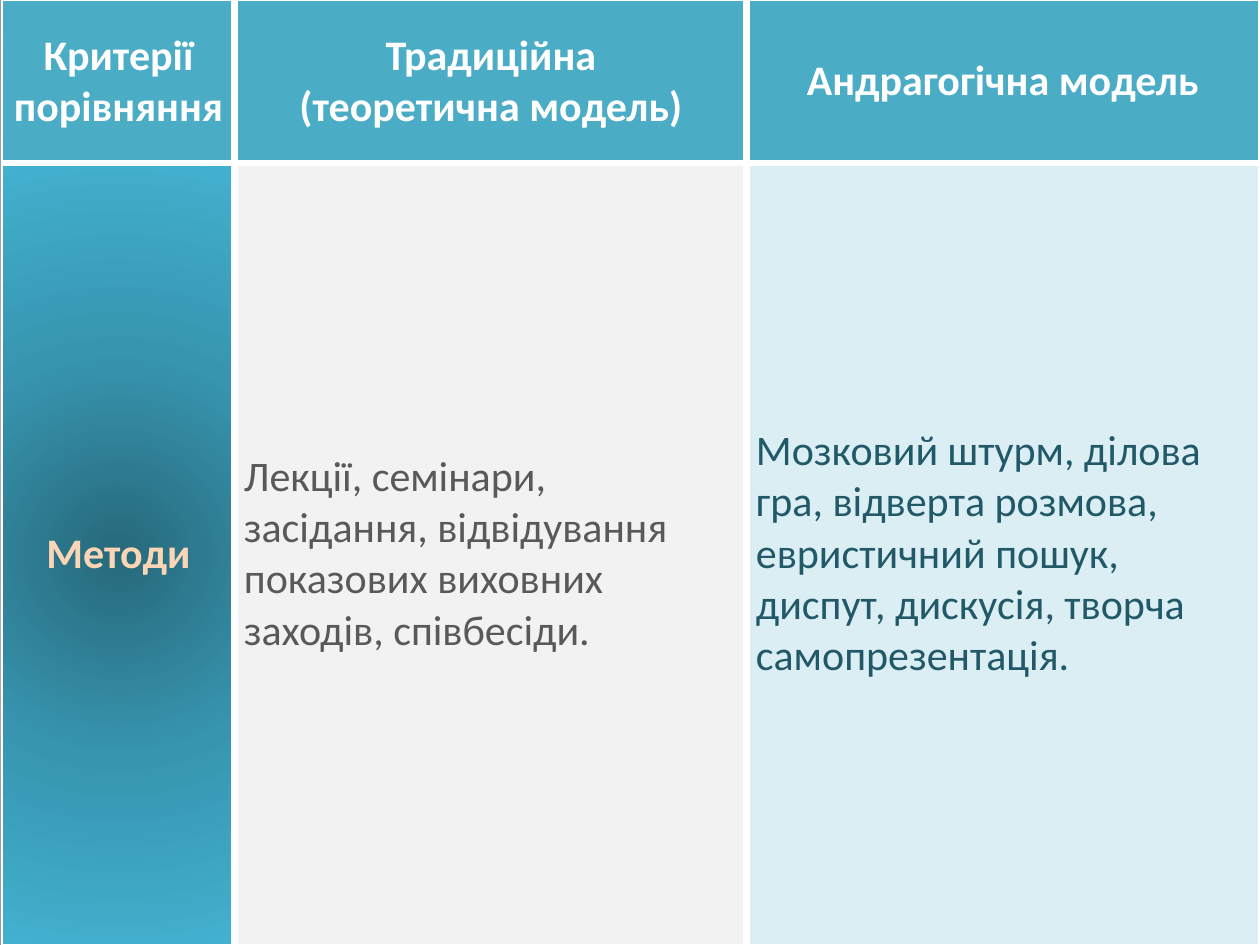
from dataclasses import dataclass

from lxml import etree
from pptx import Presentation
from pptx.dml.color import RGBColor
from pptx.enum.text import MSO_ANCHOR, PP_ALIGN
from pptx.oxml import parse_xml
from pptx.oxml.ns import nsdecls, qn
from pptx.util import Emu, Pt

CENTER, LEFT = PP_ALIGN.CENTER, PP_ALIGN.LEFT
MIDDLE = MSO_ANCHOR.MIDDLE

PX = 914400 // 126  # EMU in one px
PAGE_WIDTH, PAGE_HEIGHT = 1260, 945
TABLE_LEFT = 2
COLUMN_WIDTHS = (233, 512, 512)
ROW_HEIGHTS = (163, 782)
SIDE_MARGIN = 9
OUTER_BORDER, INNER_BORDER = Pt(1), Pt(4.5)

WHITE = RGBColor(0xFF, 0xFF, 0xFF)
GRAY = RGBColor(0x97, 0x97, 0x97)
TEAL = RGBColor(0x4B, 0xAC, 0xC6)
PEACH = RGBColor(0xFC, 0xD5, 0xB5)
DARK_GRAY = RGBColor(0x59, 0x59, 0x59)
LIGHT_GRAY = RGBColor(0xF2, 0xF2, 0xF2)
DEEP_TEAL = RGBColor(0x21, 0x59, 0x68)
PALE_TEAL = RGBColor(0xDB, 0xEE, 0xF4)

# Gradient stops run from the centre outwards: (percent, colour)
Stops = tuple[tuple[int, RGBColor], ...]
PAGE_GLOW: Stops = ((0, WHITE), (100, GRAY))
METHODS_GLOW: Stops = (
    (0, RGBColor(0x27, 0x69, 0x7B)),
    (50, RGBColor(0x37, 0x95, 0xAF)),
    (100, RGBColor(0x42, 0xB1, 0xCF)),
)


@dataclass(frozen=True)
class CellContent:
    lines: tuple[str, ...]
    fill: RGBColor | Stops = TEAL
    color: RGBColor = WHITE
    bold: bool = True
    align: PP_ALIGN = CENTER


ROWS = (
    (
        CellContent(("Критерії порівняння",)),
        CellContent(("Традиційна", "(теоретична модель)")),
        CellContent(("Андрагогічна модель",)),
    ),
    (
        CellContent(("Методи",), METHODS_GLOW, PEACH),
        CellContent(
            ("Лекції, семінари, засідання, відвідування показових виховних "
             "заходів, співбесіди.",),
            LIGHT_GRAY, DARK_GRAY, False, LEFT),
        CellContent(
            ("Мозковий штурм, ділова гра, відверта розмова, евристичний пошук, "
             "диспут, дискусія, творча самопрезентація.",),
            PALE_TEAL, DEEP_TEAL, False, LEFT),
    ),
)


def px(length: int) -> Emu:
    return Emu(length * PX)


def set_format(target: object, values: dict) -> None:
    for name, value in values.items():
        setattr(target, name, value)


def set_radial_fill(properties: etree.ElementBase, stops: Stops) -> None:
    """Swap the solid fill of a properties element for a circular gradient."""
    stop_xml = "".join(
        f'<a:gs pos="{percent * 1000}"><a:srgbClr val="{color}"/></a:gs>'
        for percent, color in stops)
    gradient = parse_xml(
        f'<a:gradFill {nsdecls("a")} rotWithShape="1"><a:gsLst>{stop_xml}</a:gsLst>'
        '<a:path path="circle"><a:fillToRect l="50000" t="50000" r="50000" '
        'b="50000"/></a:path></a:gradFill>')
    properties.replace(properties.find(qn("a:solidFill")), gradient)


def set_borders(properties: etree.ElementBase, row: int, column: int) -> None:
    """Thin lines on the table's edge, thick ones between cells."""
    on_edge = {
        "lnL": column == 0,
        "lnR": column == len(COLUMN_WIDTHS) - 1,
        "lnT": row == 0,
        "lnB": row == len(ROW_HEIGHTS) - 1,
    }
    for index, (side, outer) in enumerate(on_edge.items()):
        width = OUTER_BORDER if outer else INNER_BORDER
        properties.insert(index, parse_xml(
            f'<a:{side} {nsdecls("a")} w="{width}"><a:solidFill>'
            f'<a:srgbClr val="{WHITE}"/></a:solidFill></a:{side}>'))


def fill_cell(table, row: int, column: int, content: CellContent) -> None:
    cell = table.cell(row, column)
    set_format(cell, {
        "vertical_anchor": MIDDLE,
        "margin_left": px(SIDE_MARGIN), "margin_right": px(SIDE_MARGIN),
        "margin_top": 0, "margin_bottom": 0,
        "text": "\n".join(content.lines),
    })
    for para in cell.text_frame.paragraphs:
        para.alignment = content.align
        for span in para.runs:
            set_format(span.font, {
                "name": "Calibri", "size": Pt(24), "bold": content.bold})
            span.font.color.rgb = content.color

    cell.fill.solid()
    properties = cell._tc.tcPr
    if isinstance(content.fill, RGBColor):
        cell.fill.fore_color.rgb = content.fill
    else:
        set_radial_fill(properties, content.fill)
    set_borders(properties, row, column)


def main() -> None:
    deck = Presentation()
    set_format(deck, {"slide_width": px(PAGE_WIDTH),
                      "slide_height": px(PAGE_HEIGHT)})
    page = deck.slides.add_slide(deck.slide_layouts.get_by_name("Blank"))

    # Background
    page.background.fill.solid()
    set_radial_fill(page.element.xpath("p:cSld/p:bg/p:bgPr")[0], PAGE_GLOW)

    # Comparison table
    table = page.shapes.add_table(
        len(ROW_HEIGHTS), len(COLUMN_WIDTHS), px(TABLE_LEFT), 0,
        px(sum(COLUMN_WIDTHS)), px(sum(ROW_HEIGHTS))).table
    table.horz_banding = False
    for column, width in zip(table.columns, COLUMN_WIDTHS):
        column.width = px(width)
    for row, height in zip(table.rows, ROW_HEIGHTS):
        row.height = px(height)
    for row_index, contents in enumerate(ROWS):
        for column_index, content in enumerate(contents):
            fill_cell(table, row_index, column_index, content)

    deck.save("out.pptx")


if __name__ == "__main__":
    main()
